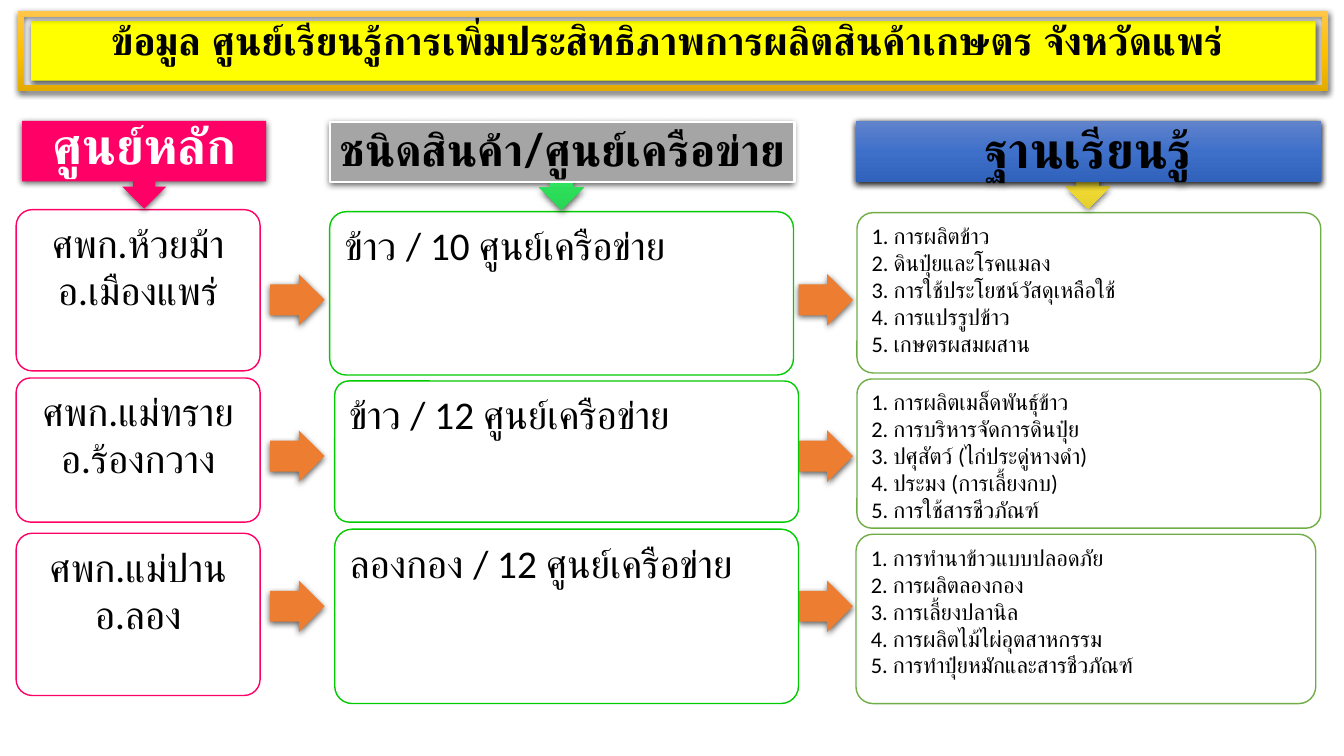
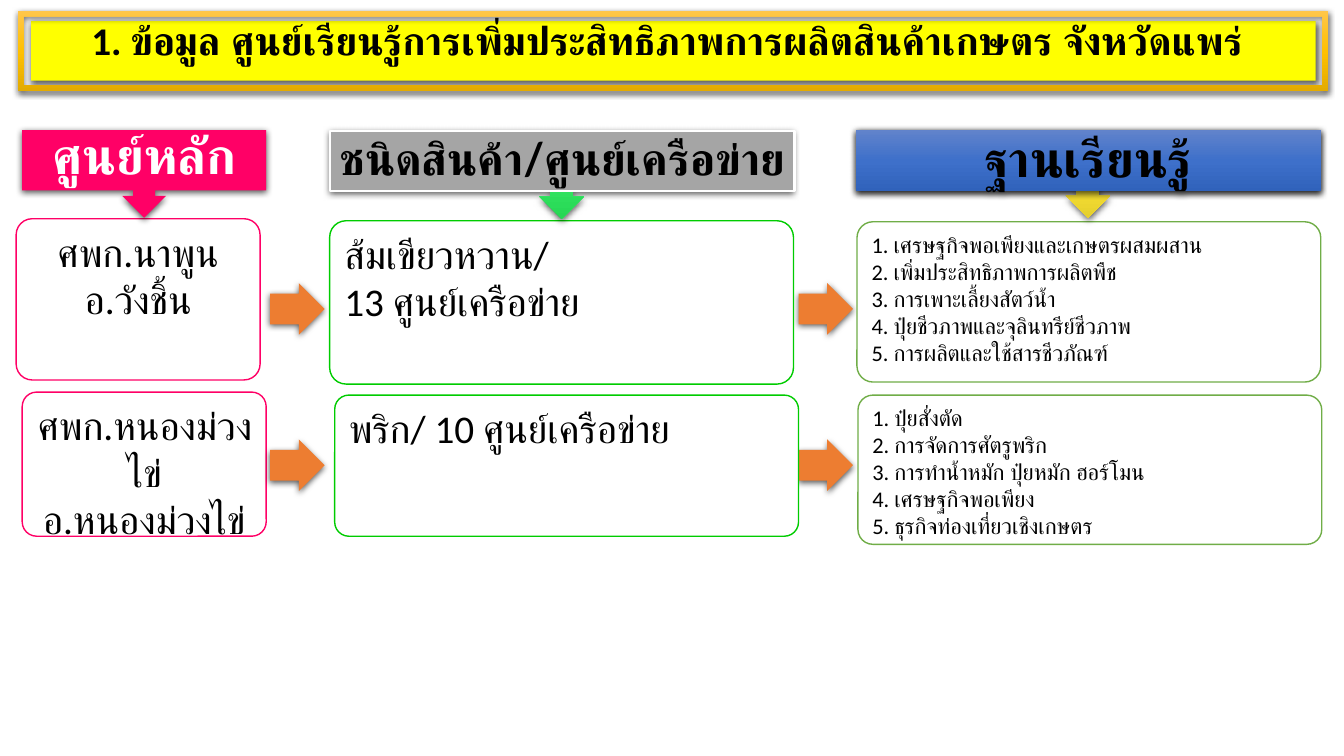
from dataclasses import dataclass, replace
from typing import NamedTuple

from pptx import Presentation
from pptx.dml.color import RGBColor
from pptx.enum.shapes import MSO_SHAPE
from pptx.enum.text import MSO_ANCHOR, MSO_AUTO_SIZE, PP_ALIGN
from pptx.oxml import parse_xml
from pptx.oxml.ns import nsdecls, qn
from pptx.util import Pt

PX = 9144  # 100 px to the inch
LEFT, CENTER = PP_ALIGN.LEFT, PP_ALIGN.CENTER
TOP, MIDDLE = MSO_ANCHOR.TOP, MSO_ANCHOR.MIDDLE
RECT, FRAME, ROUNDED = MSO_SHAPE.RECTANGLE, MSO_SHAPE.FRAME, MSO_SHAPE.ROUNDED_RECTANGLE
ARROW, CALLOUT = MSO_SHAPE.RIGHT_ARROW, MSO_SHAPE.DOWN_ARROW_CALLOUT


@dataclass(frozen=True)
class Theme:
    body_font: str = "Calibri"
    head_font: str = "Lato"
    black: str = "000000"
    white: str = "FFFFFF"
    yellow: str = "FFFF00"
    pink: str = "FF0066"
    green: str = "00CC00"
    leaf: str = "70AD47"
    orange: str = "ED7D31"
    grey: str = "A5A5A5"
    gold_blend: tuple = ("FFC64B", "FFC000", "E3AB00")
    green_blend: tuple = ("5EE57B", "36E864", "27D755")
    yellow_blend: tuple = ("FAE65D", "FFE735", "E5CF2D")
    blue_blend: tuple = ("6183CB", "3E70CA", "3062BB")
    title_size: int = 28
    head_size: int = 36
    head_size_small: int = 32
    card_size: int = 28
    list_size: int = 16


THEME = Theme()


class Box(NamedTuple):
    left: int
    top: int
    width: int
    height: int

    def inside(self, outer):
        return Box(outer.left + self.left, outer.top + self.top, self.width, self.height)

    def emu(self):
        return [length * PX for length in self]


@dataclass(frozen=True)
class RowLayout:
    """Boxes of one row, measured from the row's own corner."""
    centre: Box
    product: Box
    stations: Box
    arrow_top: int


@dataclass(frozen=True)
class Row:
    top: int
    layout: RowLayout
    centre: tuple
    product: tuple
    stations: tuple


SLIDE = Box(0, 0, 1333, 750)
BANNER = Box(18, 11, 1299, 79)
ARROW_LEFTS = (268, 792)

FIRST = RowLayout(Box(16, 0, 242, 160), Box(327, 2, 460, 162), Box(850, 3, 460, 159), 64)
SECOND = RowLayout(Box(16, 0, 242, 143), Box(332, 3, 460, 140), Box(850, 1, 460, 148), 52)
THIRD = RowLayout(Box(16, 4, 242, 161), Box(332, 0, 460, 173), Box(849, 5, 456, 168), 51)
CLOSING = replace(SECOND, centre=Box(22, 0, 242, 143), stations=Box(851, 3, 460, 148),
                  arrow_top=47)

TITLE = "ข้อมูล ศูนย์เรียนรู้การเพิ่มประสิทธิภาพการผลิตสินค้าเกษตร จังหวัดแพร่"

PAGES = (
    (TITLE, 120, (
        Row(208, FIRST, ("ศพก.ห้วยม้า", "อ.เมืองแพร่"), ("ข้าว / 10 ศูนย์เครือข่าย",),
            ("การผลิตข้าว", "ดินปุ๋ยและโรคแมลง", "การใช้ประโยชน์วัสดุเหลือใช้",
             "การแปรรูปข้าว", "เกษตรผสมผสาน")),
        Row(375, SECOND, ("ศพก.แม่ทราย", "อ.ร้องกวาง"), ("ข้าว / 12 ศูนย์เครือข่าย",),
            ("การผลิตเมล็ดพันธุ์ข้าว", "การบริหารจัดการดินปุ๋ย",
             "ปศุสัตว์ (ไก่ประดู่หางดำ)", "ประมง (การเลี้ยงกบ)", "การใช้สารชีวภัณฑ์")),
        Row(525, THIRD, ("ศพก.แม่ปาน", "อ.ลอง"), ("ลองกอง / 12 ศูนย์เครือข่าย",),
            ("การทำนาข้าวแบบปลอดภัย", "การผลิตลองกอง", "การเลี้ยงปลานิล",
             "การผลิตไม้ไผ่อุตสาหกรรม", "การทำปุ๋ยหมักและสารชีวภัณฑ์")),
    )),
    (f"1. {TITLE}", 129, (
        Row(217, FIRST, ("ศพก.นาพูน", "อ.วังชิ้น"),
            ("ส้มเขียวหวาน/", "13 ศูนย์เครือข่าย"),
            ("เศรษฐกิจพอเพียงและเกษตรผสมผสาน", "เพิ่มประสิทธิภาพการผลิตพืช",
             "การเพาะเลี้ยงสัตว์น้ำ", "ปุ๋ยชีวภาพและจุลินทรีย์ชีวภาพ",
             "การผลิตและใช้สารชีวภัณฑ์")),
        Row(389, CLOSING, ("ศพก.หนองม่วงไข่", "อ.หนองม่วงไข่"), ("พริก/ 10 ศูนย์เครือข่าย",),
            ("ปุ๋ยสั่งตัด", "การจัดการศัตรูพริก", "การทำน้ำหมัก ปุ๋ยหมัก ฮอร์โมน",
             "เศรษฐกิจพอเพียง", "ธุรกิจท่องเที่ยวเชิงเกษตร")),
    )),
)


def paint(shape, fill):
    """Fill with one colour, or with a downward blend when given several."""
    if isinstance(fill, str):
        shape.fill.solid()
        shape.fill.fore_color.rgb = RGBColor.from_string(fill)
        return
    step = 100000 // (len(fill) - 1)
    stops = "".join(f'<a:gs pos="{index * step}"><a:srgbClr val="{colour}"/></a:gs>'
                    for index, colour in enumerate(fill))
    blend = parse_xml(f'<a:gradFill {nsdecls("a")} rotWithShape="1"><a:gsLst>{stops}</a:gsLst>'
                      '<a:lin ang="5400000" scaled="0"/></a:gradFill>')
    shape.element.spPr.find(qn("a:prstGeom")).addnext(blend)


def cast_shadow(shape):
    shape.element.spPr.find(qn("a:effectLst")).append(parse_xml(
        f'<a:outerShdw {nsdecls("a")} blurRad="57150" dist="19050" dir="5400000" '
        f'algn="ctr" rotWithShape="0"><a:srgbClr val="{THEME.black}">'
        '<a:alpha val="63000"/></a:srgbClr></a:outerShdw>'))


def add_figure(page, kind, box, fill, line=None, line_width=1, adjust=(), shadow=False):
    shape = page.shapes.add_shape(kind, *box.emu())
    for index, value in enumerate(adjust):
        shape.adjustments[index] = value
    paint(shape, fill)
    if line:
        shape.line.color.rgb = RGBColor.from_string(line)
        shape.line.width = Pt(line_width)
    else:
        shape.line.fill.background()
    shape.shadow.inherit = False
    if shadow:
        cast_shadow(shape)
    return shape


def write(shape, lines, size, font=THEME.body_font, colour=THEME.black, bold=False,
          align=LEFT, anchor=TOP, inset=None, spacing=None, after=None):
    frame = shape.text_frame
    frame.word_wrap = True
    frame.vertical_anchor = anchor
    if inset is not None:
        frame.margin_left = frame.margin_right = inset * PX
        frame.margin_top = frame.margin_bottom = inset * PX
    for index, line in enumerate(lines):
        para = frame.paragraphs[0] if index == 0 else frame.add_paragraph()
        para.alignment = align
        if spacing:
            para.line_spacing = spacing
        if after:
            para.space_after = Pt(after)
        span = para.add_run()
        span.text = line
        span.font.size = Pt(size)
        span.font.name = font
        span.font.bold = bold
        span.font.color.rgb = RGBColor.from_string(colour)


def add_banner(page, box, title):
    add_figure(page, RECT, Box(13, 10, 1274, 59).inside(box), THEME.yellow, shadow=True)
    add_figure(page, FRAME, box, THEME.gold_blend, adjust=(0.067,), shadow=True)
    label = page.shapes.add_textbox(*Box(61, 0, 1165, 57).inside(box).emu())
    write(label, [title], THEME.title_size, bold=True, align=CENTER)
    label.text_frame.auto_size = MSO_AUTO_SIZE.SHAPE_TO_FIT_TEXT


def add_heading(page, box, text, callout_fill, body, size=THEME.head_size,
                colour=THEME.black, plate=None):
    """Callout pointing down, its text set on a plate or straight on the callout."""
    add_figure(page, CALLOUT, box, callout_fill, adjust=(0.25, 0.25, 0.25, 0.69), shadow=True)
    place = body.inside(box)
    label = add_figure(page, RECT, place, **plate) if plate else \
        page.shapes.add_textbox(*place.emu())
    write(label, [text], size, font=THEME.head_font, colour=colour, bold=True, align=CENTER,
          anchor=MIDDLE, inset=9, spacing=0.9, after=round(size * 0.35))


def add_headings(page, box):
    add_heading(page, Box(22, 0, 242, 87).inside(box), "ศูนย์หลัก", THEME.pink,
                Box(4, -1, 234, 57), colour=THEME.white)
    add_heading(page, Box(327, 0, 460, 88).inside(box), "ชนิดสินค้า/ศูนย์เครือข่าย",
                THEME.green_blend, Box(0, 1, 461, 60), size=THEME.head_size_small,
                plate=dict(fill=THEME.grey, line=THEME.white, line_width=1.5))
    add_heading(page, Box(849, 0, 460, 87).inside(box), "ฐานเรียนรู้", THEME.yellow_blend,
                Box(0, 0, 461, 61), plate=dict(fill=THEME.blue_blend, shadow=True))


def add_card(page, box, line, lines, size=THEME.card_size, align=LEFT):
    card = add_figure(page, ROUNDED, box, THEME.white, line=line, adjust=(0.1,))
    write(card, lines, size, align=align)


def add_row(page, box, row):
    layout = row.layout
    add_card(page, layout.centre.inside(box), THEME.pink, row.centre, align=CENTER)
    for left in ARROW_LEFTS:
        add_figure(page, ARROW, Box(left, layout.arrow_top, 54, 51).inside(box),
                   THEME.orange, adjust=(0.6, 0.5), shadow=True)
    add_card(page, layout.product.inside(box), THEME.green, row.product)
    numbered = [f"{number}. {name}" for number, name in enumerate(row.stations, 1)]
    add_card(page, layout.stations.inside(box), THEME.leaf, numbered, size=THEME.list_size)


def add_page(deck, title, headings_top, rows):
    page = deck.slides.add_slide(deck.slide_layouts[6])
    add_banner(page, BANNER, title)
    for row in rows:
        add_row(page, SLIDE._replace(top=row.top), row)
    add_headings(page, SLIDE._replace(top=headings_top))


def main():
    deck = Presentation()
    deck.slide_width, deck.slide_height = SLIDE.width * PX, SLIDE.height * PX
    for title, headings_top, rows in PAGES:
        add_page(deck, title, headings_top, rows)
    deck.save("out.pptx")


if __name__ == "__main__":
    main()
